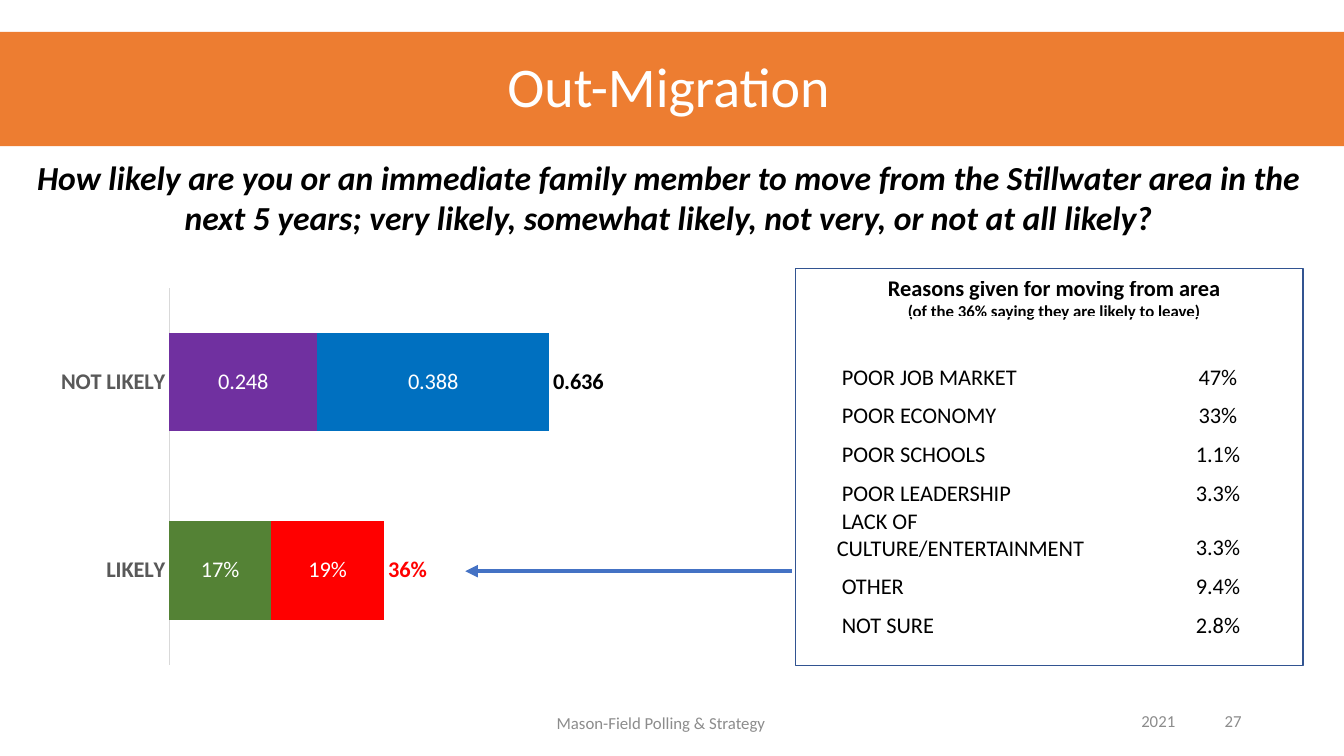
from dataclasses import dataclass

from lxml.etree import SubElement
from pptx import Presentation
from pptx.chart.data import CategoryChartData
from pptx.dml.color import RGBColor
from pptx.enum.chart import XL_CHART_TYPE, XL_LABEL_POSITION, XL_TICK_MARK
from pptx.enum.shapes import MSO_CONNECTOR, MSO_SHAPE
from pptx.enum.text import MSO_ANCHOR, PP_ALIGN
from pptx.oxml import parse_xml
from pptx.oxml.ns import nsdecls, qn
from pptx.util import Inches, Pt

CELL = Inches(1) // 12  # the slide is a grid of 160 columns and 90 rows


@dataclass(frozen=True)
class Theme:
    font: str = "Calibri"
    title: int = 40
    question: int = 24
    body: int = 16
    small: int = 12
    black: str = "000000"
    white: str = "FFFFFF"
    orange: str = "ED7D31"
    grey: str = "8C8C8C"
    label: str = "595959"
    axis: str = "D9D9D9"
    frame: str = "325491"
    arrow: str = "4472C4"
    purple: str = "7030A0"
    blue: str = "0070C0"
    green: str = "548235"
    red: str = "FF0000"


THEME = Theme()


@dataclass(frozen=True)
class Box:
    left: float
    top: float
    width: float
    height: float

    def inner(self, left, top, width, height):
        return Box(self.left + left, self.top + top, width, height)

    def emu(self):
        return [round(n * CELL) for n in (self.left, self.top, self.width, self.height)]


def rgb(colour):
    return RGBColor.from_string(colour)


def style(font, size, colour, bold=False, italic=False):
    font.name, font.size = THEME.font, Pt(size)
    font.bold, font.italic = bold, italic
    font.color.rgb = rgb(colour)


def write(frame, text, size=THEME.body, colour=THEME.black, bold=False, italic=False,
          align=PP_ALIGN.CENTER, anchor=MSO_ANCHOR.TOP, wrap=True, more=False, spacing=None):
    """Write one paragraph; more=True adds it below those already there."""
    frame.word_wrap, frame.vertical_anchor = wrap, anchor
    paragraph = frame.add_paragraph() if more else frame.paragraphs[0]
    paragraph.alignment = align
    paragraph.line_spacing = spacing
    run = paragraph.add_run()
    run.text = text
    style(run.font, size, colour, bold, italic)
    return paragraph


def add_title(slide, box):
    title = slide.shapes.title
    title.left, title.top, title.width, title.height = box.emu()
    title.fill.solid()
    title.fill.fore_color.rgb = rgb(THEME.orange)
    write(title.text_frame, "Out-Migration", size=THEME.title, colour=THEME.white,
          anchor=MSO_ANCHOR.MIDDLE, spacing=0.9)


def add_question(slide, box):
    question = slide.shapes.add_textbox(*box.emu())
    write(question.text_frame,
          "How likely are you or an immediate family member to move from the Stillwater area "
          "in the next 5 years; very likely, somewhat likely, not very, or not at all likely?",
          size=THEME.question, bold=True, italic=True)


def add_likelihood_chart(slide, box):
    # Bar segments: values, fill (None for a total), label colour, label format
    segments = [
        ((0.248, None), THEME.purple, THEME.white, "General"),
        ((0.388, None), THEME.blue, THEME.white, "General"),
        ((0.636, None), None, THEME.black, "General"),
        ((None, 0.17), THEME.green, THEME.white, "0%"),
        ((None, 0.19), THEME.red, THEME.white, "0%"),
        ((None, 0.36), None, THEME.red, "0%"),
    ]
    data = CategoryChartData()
    data.categories = ["NOT LIKELY", "LIKELY"]
    for number, (values, *_) in enumerate(segments, 1):
        data.add_series(f"Series {number}", values)
    chart = slide.shapes.add_chart(XL_CHART_TYPE.BAR_STACKED, *box.emu(), data).chart
    chart.has_legend = chart.has_title = False
    style(chart.font, THEME.body, THEME.black)

    # Axes
    answers, shares = chart.category_axis, chart.value_axis
    answers.reverse_order = True
    answers.major_tick_mark = answers.minor_tick_mark = XL_TICK_MARK.NONE
    answers.format.line.color.rgb = rgb(THEME.axis)
    answers.format.line.width = Pt(0.75)
    style(answers.tick_labels.font, THEME.body, THEME.label, bold=True)
    shares.visible = shares.has_major_gridlines = False
    shares.minimum_scale, shares.maximum_scale = 0, 1.4

    # Segments and their labels
    plot = chart.plots[0]
    plot.gap_width, plot.overlap, plot.vary_by_categories = 92, 100, False
    for series, (_, fill, ink, number_format) in zip(plot.series, segments):
        if fill:
            series.format.fill.solid()
            series.format.fill.fore_color.rgb = rgb(fill)
        else:
            series.format.fill.background()
        labels = series.data_labels
        labels.show_value = True
        labels.number_format, labels.number_format_is_linked = number_format, False
        labels.position = XL_LABEL_POSITION.CENTER if fill else XL_LABEL_POSITION.INSIDE_BASE
        style(labels.font, THEME.body, ink, bold=not fill)

    # Fixed plot area
    area = chart.element.find(".//" + qn("c:plotArea"))
    for old in area.findall(qn("c:layout")):
        area.remove(old)
    parts = {"layoutTarget": "inner", "xMode": "edge", "yMode": "edge",
             "x": 0.146, "y": 0.089, "w": 0.838, "h": 0.911}
    tags = "".join(f'<c:{tag} val="{value}"/>' for tag, value in parts.items())
    area.insert(0, parse_xml(f'<c:layout {nsdecls("c")}><c:manualLayout>{tags}'
                             "</c:manualLayout></c:layout>"))


def format_cell(cell):
    cell.fill.background()
    cell.margin_left = cell.margin_right = cell.margin_top = Inches(0.01)
    cell.margin_bottom = 0
    properties = cell.fill._xPr
    for place, side in enumerate("LRTB"):
        properties.insert(place, parse_xml(
            f'<a:ln{side} {nsdecls("a")} w="{Pt(1)}"><a:solidFill>'
            f'<a:srgbClr val="{THEME.white}"/></a:solidFill></a:ln{side}>'))


def add_reasons_table(slide, box):
    # Reason, share, columns the reason spans
    reasons = [
        ("POOR JOB MARKET", "47%", 2), ("POOR ECONOMY", "33%", 2),
        ("POOR SCHOOLS", "1.1%", 2), ("POOR LEADERSHIP", "3.3%", 2),
        ("LACK OF CULTURE/ENTERTAINMENT", "3.3%", 3),
        ("OTHER", "9.4%", 1), ("NOT SURE", "2.8%", 1),
    ]
    spacers = 2
    table = slide.shapes.add_table(spacers + len(reasons), 4, *box.emu()).table
    table.first_row = table.horz_banding = False
    for number, row in enumerate(table.rows):
        row.height = round((4.3 if number < spacers else 4.6) * CELL)
    for cell in table.iter_cells():
        format_cell(cell)
    table.cell(0, 0).merge(table.cell(0, 3))
    for row, (reason, share, span) in enumerate(reasons, spacers):
        if span > 1:
            table.cell(row, 0).merge(table.cell(row, span - 1))
        for column, text, align in ((0, reason, PP_ALIGN.LEFT), (3, share, PP_ALIGN.CENTER)):
            cell = table.cell(row, column)
            paragraph = write(cell.text_frame, text, align=align)
            cell.vertical_anchor = MSO_ANCHOR.BOTTOM
            if column == 0:  # first-line indent
                paragraph._p.get_or_add_pPr().set("indent", str(Inches(0.05)))


def add_reasons_panel(slide, box):
    heading = slide.shapes.add_textbox(*box.inner(8.9, 0, 43.8, 6.8).emu()).text_frame
    write(heading, "Reasons given for moving from area", bold=True, wrap=False)
    write(heading, "(of the 36% saying they are likely to leave)", size=THEME.small,
          bold=True, wrap=False, more=True)
    add_reasons_table(slide, box.inner(4.8, 1.4, 52, 40.8))
    border = slide.shapes.add_shape(MSO_SHAPE.RECTANGLE, *box.emu())
    border.shadow.inherit = False
    border.fill.background()
    border.line.color.rgb = rgb(THEME.frame)
    border.line.width = Pt(1)


def add_arrow(slide, start, end, row):
    x1, x2, y = (round(n * CELL) for n in (start, end, row))
    arrow = slide.shapes.add_connector(MSO_CONNECTOR.STRAIGHT, x1, y, x2, y)
    arrow.line.color.rgb = rgb(THEME.arrow)
    arrow.line.width = Pt(3)
    SubElement(arrow.line._get_or_add_ln(), qn("a:tailEnd"), type="triangle")
    SubElement(arrow.element.spPr, qn("a:effectLst"))


def add_footer(slide, box):
    for text, left, width, height, align in (
            ("Mason-Field Polling & Strategy", 0, 54, 5.4, PP_ALIGN.CENTER),
            ("2021", 77.4, 12, 4.8, PP_ALIGN.RIGHT),
            ("27", 89.4, 7.9, 4.8, PP_ALIGN.RIGHT)):
        part = slide.shapes.add_textbox(*box.inner(left, 0, width, height).emu())
        write(part.text_frame, text, size=THEME.small, colour=THEME.grey, align=align,
              anchor=MSO_ANCHOR.MIDDLE)


def main():
    deck = Presentation()
    deck.slide_width, deck.slide_height = 160 * CELL, 90 * CELL
    slide = deck.slides.add_slide(deck.slide_layouts[5])
    add_title(slide, Box(-0.8, 3.8, 160.8, 13.6))
    add_question(slide, Box(-0.8, 18.1, 160.8, 10.9))
    add_likelihood_chart(slide, Box(2.8, 29.9, 118.8, 49.3))
    add_reasons_panel(slide, Box(94.7, 32, 60.4, 47.2))
    add_arrow(slide, 94.3, 55.4, 68)
    add_footer(slide, Box(51.7, 83.4, 97.3, 5.4))
    deck.save("out.pptx")


if __name__ == "__main__":
    main()
